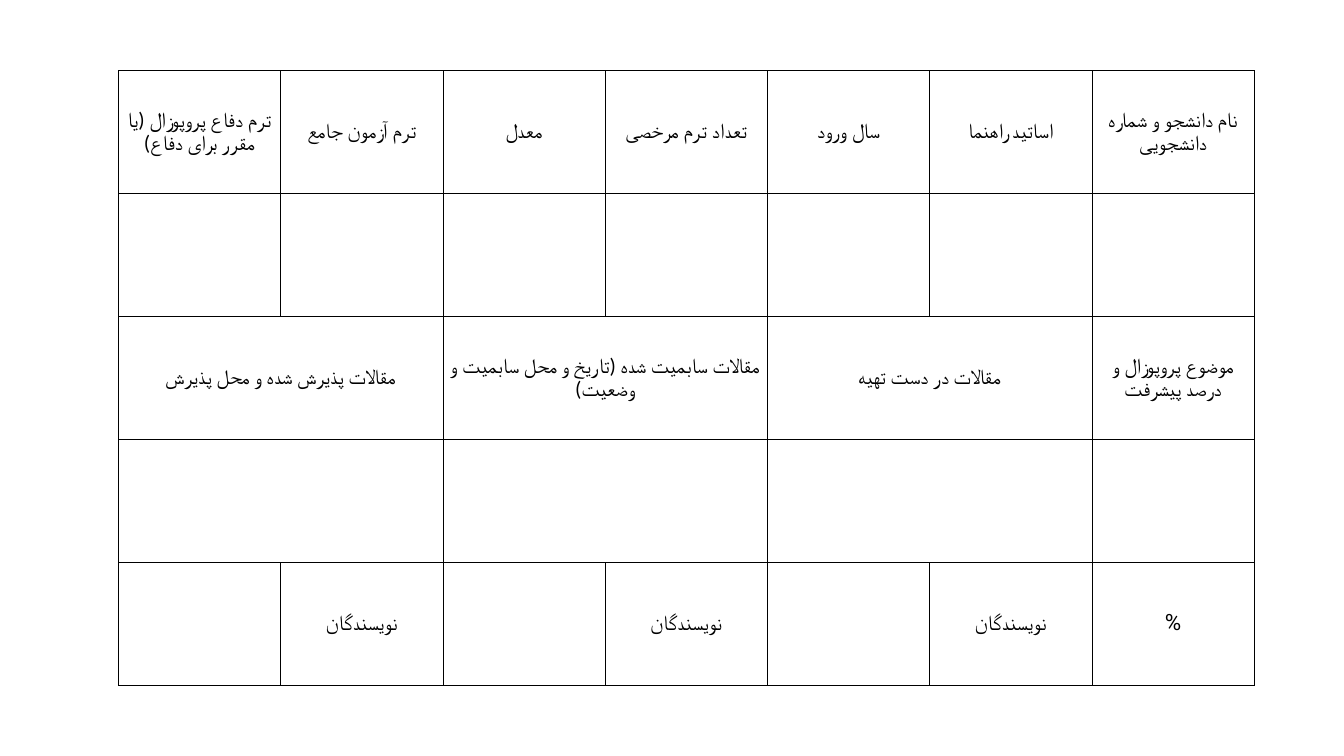
from lxml import etree
from pptx import Presentation
from pptx import util as u
from pptx.dml.color import RGBColor
from pptx.enum import text
from pptx.oxml.ns import qn

BLACK = RGBColor(0, 0, 0)
SLIDE_WIDTH, SLIDE_HEIGHT = 26.67, 15
LEFT, TOP = 2.35, 1.4
COLUMN_WIDTH, ROW_HEIGHT = 3.22, 2.44
COLUMNS = 7
MARGIN = 0.06

# Each row lists (text, columns spanned) from left to right.
STUDENT_HEADINGS = [
    ("ترم دفاع پروپوزال (یا مقرر برای دفاع)", 1),
    ("ترم آزمون جامع", 1),
    ("معدل", 1),
    ("تعداد ترم مرخصی", 1),
    ("سال ورود", 1),
    ("اساتید راهنما", 1),
    ("نام دانشجو و شماره دانشجویی", 1),
]
PAPER_HEADINGS = [
    ("مقالات پذیرش شده و محل پذیرش", 2),
    ("مقالات سابمیت شده (تاریخ و محل سابمیت و وضعیت)", 2),
    ("مقالات در دست تهیه", 2),
    ("موضوع پروپوزال و درصد پیشرفت", 1),
]
ROWS = [
    STUDENT_HEADINGS,
    [("", 1)] * COLUMNS,
    PAPER_HEADINGS,
    [("", span) for _, span in PAPER_HEADINGS],
    [("", 1), ("نویسندگان", 1)] * 3 + [("%", 1)],
]


def write(cell, content, size=30, font="Calibri", right_to_left=True):
    cell.vertical_anchor = text.MSO_ANCHOR.MIDDLE
    cell.margin_left = cell.margin_right = u.Inches(MARGIN)
    cell.margin_top = cell.margin_bottom = u.Inches(MARGIN)
    paragraph = cell.text_frame.paragraphs[0]
    paragraph.alignment = text.PP_ALIGN.CENTER
    paragraph.line_spacing = 0.9
    if right_to_left:
        paragraph._p.get_or_add_pPr().set("rtl", "1")
    run = paragraph.add_run()
    run.text = content
    run.font.size = u.Pt(size)
    run.font.name = font
    run.font.color.rgb = BLACK
    complex_script = etree.SubElement(run._r.get_or_add_rPr(), qn("a:cs"))
    complex_script.set("typeface", font)


def outline(cell, color=BLACK, width=1):
    properties = cell._tc.get_or_add_tcPr()
    for side in ("lnL", "lnR", "lnT", "lnB"):
        line = etree.SubElement(properties, qn("a:" + side), w=str(u.Pt(width)))
        fill = etree.SubElement(line, qn("a:solidFill"))
        etree.SubElement(fill, qn("a:srgbClr"), val=str(color))
    cell.fill.background()


def add_report_table(slide):
    table = slide.shapes.add_table(
        len(ROWS), COLUMNS, u.Inches(LEFT), u.Inches(TOP),
        u.Inches(COLUMNS * COLUMN_WIDTH), u.Inches(len(ROWS) * ROW_HEIGHT)).table
    table.first_row = table.horz_banding = False
    for column in table.columns:
        column.width = u.Inches(COLUMN_WIDTH)
    for row in table.rows:
        row.height = u.Inches(ROW_HEIGHT)
    for cell in table.iter_cells():
        outline(cell)

    for row_index, entries in enumerate(ROWS):
        column_index = 0
        for content, span in entries:
            cell = table.cell(row_index, column_index)
            if span > 1:
                cell.merge(table.cell(row_index, column_index + span - 1))
            if content == "%":
                write(cell, content, size=32, font="Roboto", right_to_left=False)
            elif content:
                write(cell, content, right_to_left="سابمیت" not in content)
            column_index += span


def main():
    presentation = Presentation()
    presentation.slide_width = u.Inches(SLIDE_WIDTH)
    presentation.slide_height = u.Inches(SLIDE_HEIGHT)
    slide = presentation.slides.add_slide(presentation.slide_layouts[6])
    add_report_table(slide)
    presentation.save("out.pptx")


if __name__ == "__main__":
    main()
